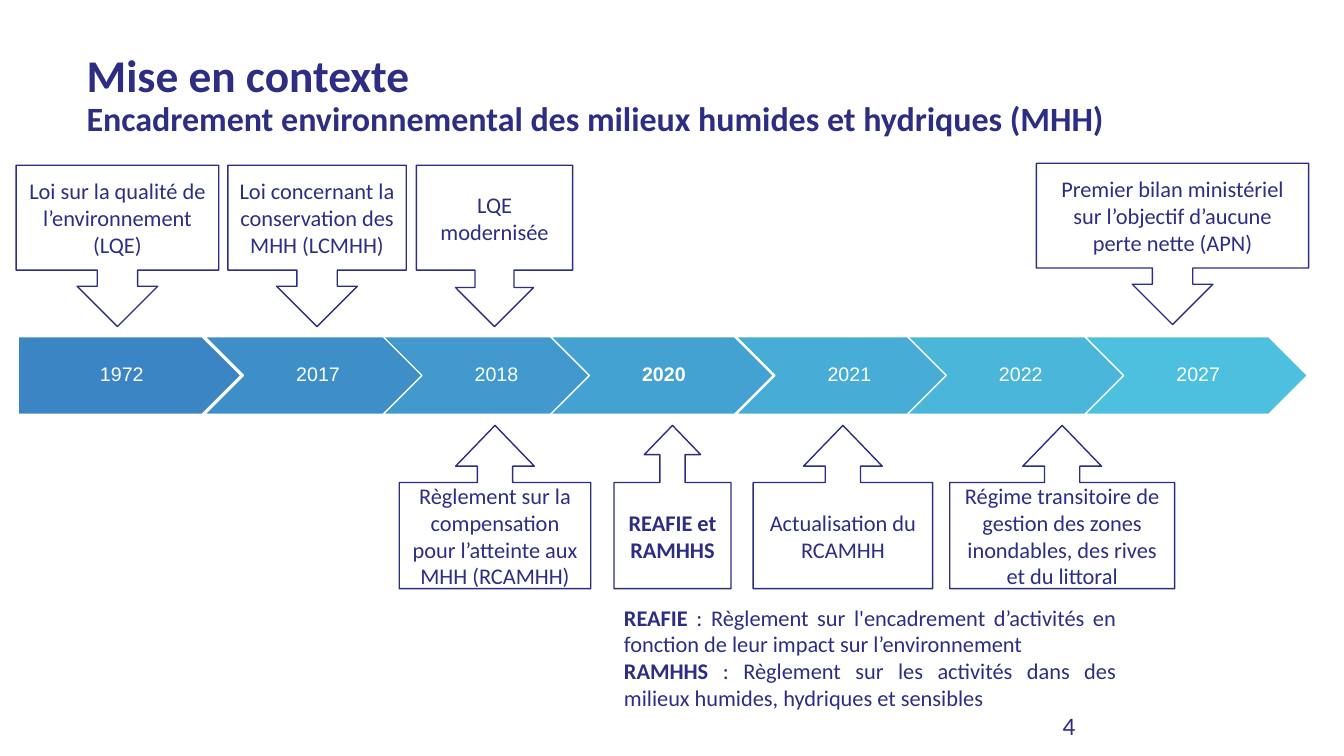
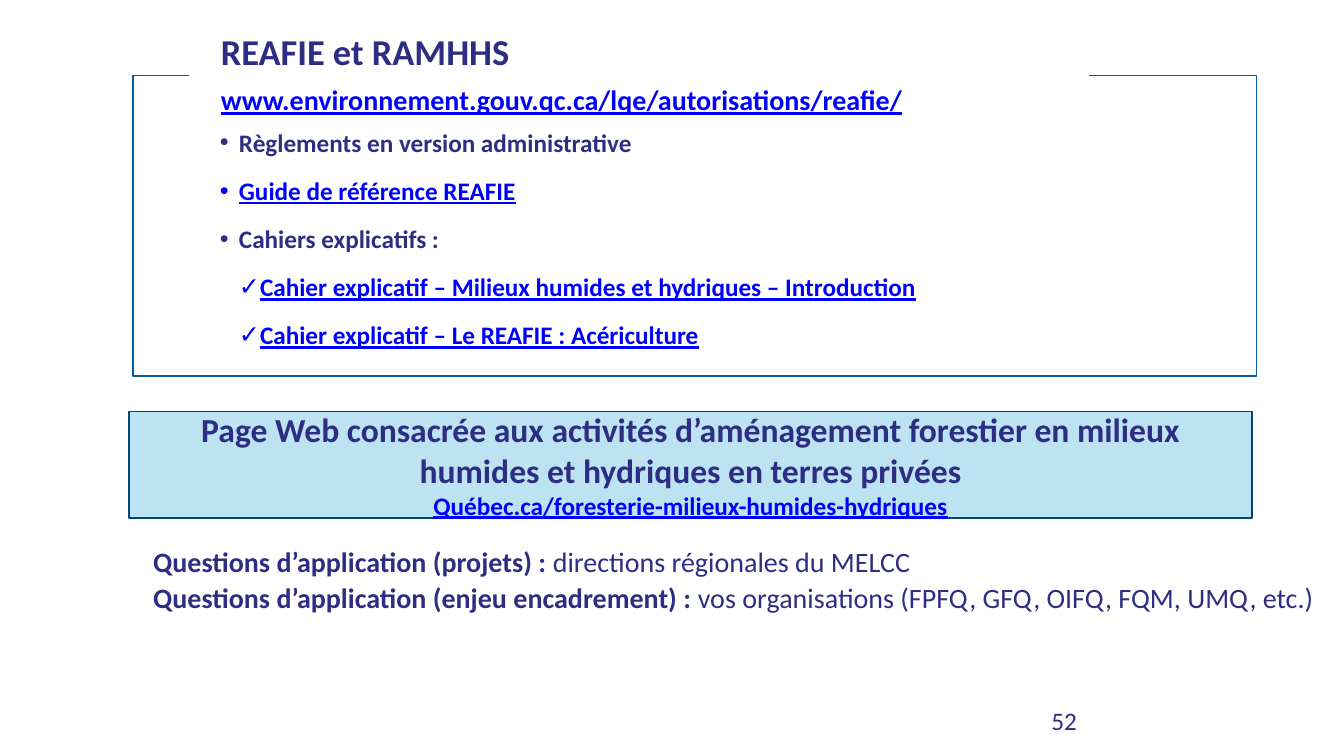
from lxml import etree
from pptx import Presentation
from pptx.dml.color import RGBColor
from pptx.enum.shapes import MSO_SHAPE as SHAPE
from pptx.enum.text import MSO_ANCHOR as ANCHOR, MSO_AUTO_SIZE as AUTO_SIZE, PP_ALIGN as ALIGN
from pptx.oxml.ns import qn
from pptx.util import Inches, Pt

NAVY = RGBColor(0x2D, 0x2E, 0x83)
WHITE = RGBColor(0xFF, 0xFF, 0xFF)
LINK_BLUE = RGBColor(0x00, 0x00, 0xFF)
FRAME_BLUE = RGBColor(0x00, 0x5D, 0xA1)
BANNER_FILL = RGBColor(0xBD, 0xE3, 0xF2)
BANNER_LINE = RGBColor(0x00, 0x45, 0x77)
STEP_FIRST = RGBColor(0x3B, 0x85, 0xC4)
STEP_LAST = RGBColor(0x4D, 0xC0, 0xDF)

TITLE_ONLY, TITLE_AND_BODY = 5, 1
BODY_FONT, YEAR_FONT = "Calibri", "Arial"
UP_CALLOUT = (0.216, 0.241, 0.25, 0.65)

# Timeline: year, left edge, bold
STEPS = [
    ("1972", 0.18, False), ("2017", 2.03, False), ("2018", 3.8, False),
    ("2020", 5.46, True), ("2021", 7.3, False), ("2022", 9, False),
    ("2027", 10.76, False),
]
# Callouts: left, top, width, text, bold
CALLOUTS_ABOVE = [
    (0.16, 1.64, 2.01, "Loi sur la qualité de l’environnement (LQE)", False),
    (2.26, 1.64, 1.77, "Loi concernant la conservation des MHH (LCMHH)", False),
    (4.13, 1.64, 1.55, "LQE modernisée", False),
    (10.28, 1.62, 2.7, "Premier bilan ministériel sur l’objectif d’aucune perte nette (APN)", False),
]
CALLOUTS_BELOW = [
    (3.96, 4.22, 1.9, "Règlement sur la compensation pour l’atteinte aux MHH (RCAMHH)", False),
    (6.09, 4.22, 1.16, "REAFIE et RAMHHS", True),
    (7.47, 4.22, 1.78, "Actualisation du RCAMHH", False),
    (9.42, 4.22, 2.23,
     "Régime transitoire de gestion des zones inondables, des rives et du littoral", False),
]
DEFINITIONS = [
    ("REAFIE", " : Règlement sur l'encadrement d’activités en fonction de leur impact"
     " sur l’environnement"),
    ("RAMHHS", " : Règlement sur les activités dans des milieux humides, hydriques et sensibles"),
]
# Resources: text, level, is a link
RESOURCES = [
    ("Règlements en version administrative", 0, False),
    ("Guide de référence REAFIE", 0, True),
    ("Cahiers explicatifs :", 0, False),
    ("Cahier explicatif – Milieux humides et hydriques – Introduction", 1, True),
    ("Cahier explicatif – Le REAFIE : Acériculture", 1, True),
]
CONTACTS = [
    ("Questions d’application (projets) : ", "directions régionales du MELCC"),
    ("Questions d’application (enjeu encadrement) : ",
     "vos organisations (FPFQ, GFQ, OIFQ, FQM, UMQ, etc.)"),
]


# Shared helpers
def inches(box):
    return [Inches(length) for length in box]


def place(shape, box):
    shape.left, shape.top, shape.width, shape.height = inches(box)


def format_run(run, size, bold=False, color=NAVY, font=BODY_FONT, link=False):
    run.font.name = font
    run.font.size = Pt(size)
    run.font.bold = bold
    run.font.color.rgb = LINK_BLUE if link else color
    if link:
        run.font.underline = True


def prepare_frame(shape, anchor=ANCHOR.TOP, insets=(0.1, 0.05, 0.1, 0.05)):
    frame = shape.text_frame
    frame.word_wrap = True
    frame.auto_size = AUTO_SIZE.NONE
    frame.vertical_anchor = anchor
    (frame.margin_left, frame.margin_top,
     frame.margin_right, frame.margin_bottom) = inches(insets)
    return frame


def write_lines(frame, lines, align=ALIGN.LEFT, spacing=1.0, gap=0):
    """Each line is (text, size, is a link), set in bold."""
    frame.text = "\n".join(text for text, _, _ in lines)
    for paragraph, (_, size, link) in zip(frame.paragraphs, lines):
        paragraph.alignment = align
        paragraph.line_spacing = spacing
        paragraph.space_before = Pt(0)
        paragraph.space_after = Pt(gap)
        format_run(paragraph.runs[0], size, True, link=link)


def write_terms(frame, terms, size, align, spacing=1.0, gap=0):
    """Each paragraph is a bold term followed by its plain explanation."""
    for index, pair in enumerate(terms):
        paragraph = frame.add_paragraph() if index else frame.paragraphs[0]
        paragraph.alignment = align
        paragraph.line_spacing = spacing
        if index:
            paragraph.space_before = Pt(gap)
        for text, bold in zip(pair, (True, False)):
            run = paragraph.add_run()
            run.text = text
            format_run(run, size, bold)


def add_panel(slide, kind, box, fill, line):
    shape = slide.shapes.add_shape(kind, *inches(box))
    shape.shadow.inherit = False
    paint(shape, fill, line)
    return shape


def paint(shape, fill, line):
    if fill is None:
        shape.fill.background()
    else:
        shape.fill.solid()
        shape.fill.fore_color.rgb = fill
    shape.line.color.rgb = line
    shape.line.width = Pt(1)


def add_page_number(slide, number, left, top):
    box = slide.shapes.add_textbox(*inches((left, top, 2.5, 0.4)))
    frame = prepare_frame(box)
    frame.text = number
    format_run(frame.paragraphs[0].runs[0], 18)


# Context slide
def add_timeline(slide, top, width, height):
    for index, (year, left, bold) in enumerate(STEPS):
        share = index / (len(STEPS) - 1)
        fill = RGBColor(*(round(first + (last - first) * share)
                          for first, last in zip(STEP_FIRST, STEP_LAST)))
        kind = SHAPE.CHEVRON if index else SHAPE.PENTAGON
        step = add_panel(slide, kind, (left, top, width, height), fill, WHITE)
        insets = (0.06, 0.04, 0.02, 0.04) if index else (0.04, 0.04, 0, 0.04)
        frame = prepare_frame(step, ANCHOR.MIDDLE, insets)
        frame.text = year
        paragraph = frame.paragraphs[0]
        paragraph.alignment = ALIGN.CENTER
        paragraph.line_spacing = 0.9
        format_run(paragraph.runs[0], 14, bold, WHITE, YEAR_FONT)


def add_callouts(slide, kind, callouts, height, adjustments=()):
    for left, top, width, text, bold in callouts:
        callout = add_panel(slide, kind, (left, top, width, height), None, NAVY)
        for index, value in enumerate(adjustments):
            callout.adjustments[index] = value
        frame = prepare_frame(callout, ANCHOR.MIDDLE)
        frame.text = text
        frame.paragraphs[0].alignment = ALIGN.CENTER
        format_run(frame.paragraphs[0].runs[0], 16, bold)


def build_context_slide(presentation):
    slide = presentation.slides.add_slide(presentation.slide_layouts[TITLE_ONLY])
    title = slide.shapes.title
    place(title, (0.76, 0.52, 12.4, 0.87))
    frame = prepare_frame(title, ANCHOR.MIDDLE, (0.1, 0, 0.1, 0))
    write_lines(frame, [
        ("Mise en contexte", 32.4, False),
        ("Encadrement environnemental des milieux humides et hydriques (MHH)", 24.3, False),
    ], spacing=0.9)

    add_timeline(slide, 3.34, 2.21, 0.77)
    add_callouts(slide, SHAPE.DOWN_ARROW_CALLOUT, CALLOUTS_ABOVE, 1.6)
    add_callouts(slide, SHAPE.UP_ARROW_CALLOUT, CALLOUTS_BELOW, 1.62, UP_CALLOUT)

    definitions = slide.shapes.add_textbox(*inches((6.09, 5.94, 5.08, 1.18)))
    write_terms(prepare_frame(definitions), DEFINITIONS, 16, ALIGN.JUSTIFY)
    add_page_number(slide, "4", 10.44, 7)


# Resources slide
def set_bullet(paragraph, level):
    properties = paragraph._p.get_or_add_pPr()
    properties.set("marL", str(Inches(0.19 * (level + 1))))
    properties.set("indent", str(-Inches(0.19)))
    etree.SubElement(properties, qn("a:buChar")).set("char", "•✓"[level])


def fill_resource_list(body, box):
    place(body, box)
    paint(body, WHITE, FRAME_BLUE)
    frame = prepare_frame(body, insets=(0.86, 0.36, 0.86, 0.14))
    write_lines(frame, [(text, 18, link) for text, _, link in RESOURCES], spacing=1.5, gap=2)
    for paragraph, (_, level, _) in zip(frame.paragraphs, RESOURCES):
        paragraph.level = level
        set_bullet(paragraph, level)


def add_banner(slide, box):
    banner = add_panel(slide, SHAPE.RECTANGLE, box, BANNER_FILL, BANNER_LINE)
    write_lines(prepare_frame(banner, ANCHOR.MIDDLE), [
        ("Page Web consacrée aux activités d’aménagement forestier en milieux"
         " humides et hydriques en terres privées", 24, False),
        ("Québec.ca/foresterie-milieux-humides-hydriques", 18, True),
    ], ALIGN.CENTER)


def build_resources_slide(presentation):
    slide = presentation.slides.add_slide(presentation.slide_layouts[TITLE_AND_BODY])
    title, body = slide.placeholders
    fill_resource_list(body, (1.32, 0.75, 11.14, 2.98))

    # The title plate lies over the top edge of the list frame
    body._element.addnext(title._element)
    place(title, (1.88, 0.49, 8.91, 0.52))
    paint(title, WHITE, WHITE)
    frame = prepare_frame(title, ANCHOR.MIDDLE, (0.31, 0, 0.31, 0))
    write_lines(frame, [
        ("REAFIE et RAMHHS", 26, False),
        ("www.environnement.gouv.qc.ca/lqe/autorisations/reafie/", 20, True),
    ], spacing=0.9, gap=9)

    add_banner(slide, (1.28, 4.08, 11.14, 1.06))
    contacts = slide.shapes.add_textbox(*inches((1.39, 5.31, 11.94, 0.86)))
    frame = prepare_frame(contacts, ANCHOR.BOTTOM, (0.13, 0.07, 0.13, 0.07))
    write_terms(frame, CONTACTS, 20, ALIGN.LEFT, 0.9, 4)
    add_page_number(slide, "52", 10.33, 6.95)


def main():
    presentation = Presentation()
    presentation.slide_width = Inches(13.33)
    presentation.slide_height = Inches(7.5)
    build_context_slide(presentation)
    build_resources_slide(presentation)
    presentation.save("out.pptx")


if __name__ == "__main__":
    main()
